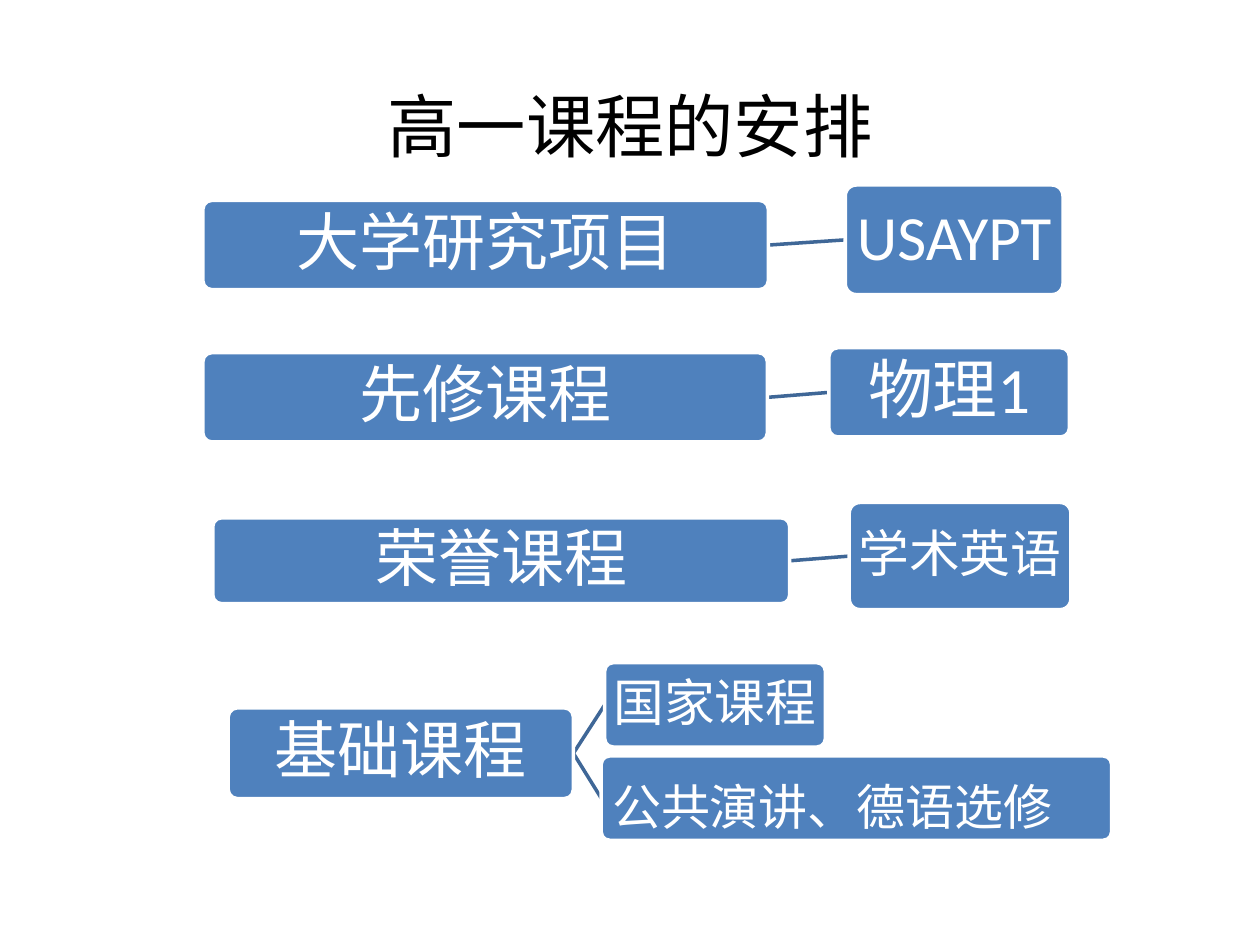
import pptx
import pptx.util
import pptx.dml.color
import pptx.enum.shapes
import pptx.enum.text
import pptx.oxml.ns
from lxml import etree
from pptx.util import Cm

FONT = "Calibri"
BLUE, DARK_BLUE, WHITE, BLACK = "4F81BD", "3F6797", "FFFFFF", "000000"

# Each course: its box, then the boxes it leads to; a box is (text, size, frame in cm).
COURSES = [
    (("大学研究项目", 36, (4.09, 4.04, 11.4, 1.8)),
     [("USAYPT", 36, (17.04, 3.73, 4.39, 2.21))]),
    (("先修课程", 36, (4.09, 7.11, 11.38, 1.8)),
     [("物理1", 37, (16.71, 7.01, 4.85, 1.8))]),
    (("荣誉课程", 36, (4.29, 10.44, 11.63, 1.73)),
     [("学术英语", 29, (17.12, 10.13, 4.47, 2.16))]),
    (("基础课程", 36, (4.6, 14.27, 6.96, 1.83)),
     [("国家课程", 29, (12.19, 13.36, 4.45, 1.7)),
      ("", 28, (12.12, 15.24, 10.29, 1.7))]),
]


def color(value):
    return pptx.dml.color.RGBColor.from_string(value)


def write(sp, text, size, fg=WHITE, align="CENTER", anchor="MIDDLE",
          wrap=True, inset=None, spacing=None):
    tf = sp.text_frame
    tf.word_wrap = wrap
    tf.vertical_anchor = pptx.enum.text.MSO_ANCHOR[anchor]
    if inset is not None:
        tf.margin_left = tf.margin_right = Cm(inset)
        tf.margin_top = tf.margin_bottom = Cm(inset)
    p = tf.paragraphs[0]
    p.alignment = pptx.enum.text.PP_ALIGN[align]
    if spacing:
        p.line_spacing = spacing
    r = p.add_run()
    r.text = text
    r.font.name = FONT
    r.font.size = pptx.util.Pt(size)
    r.font.color.rgb = color(fg)


def add_text(s, frame, text, size, **fmt):
    sp = s.shapes.add_textbox(*map(Cm, frame))
    write(sp, text, size, **fmt)


def add_box(s, text, size, frame):
    sp = s.shapes.add_shape(
        pptx.enum.shapes.MSO_SHAPE.ROUNDED_RECTANGLE, *map(Cm, frame))
    sp.adjustments[0] = 0.1
    sp.shadow.inherit = False
    sp.fill.solid()
    sp.fill.fore_color.rgb = color(BLUE)
    sp.line.color.rgb = color(WHITE)
    sp.line.width = pptx.util.Pt(2)
    if text:
        write(sp, text, size, wrap=False, inset=0.06, spacing=0.9)


def add_link(s, start, end):
    """Join the right middle of one frame to the left middle of another."""
    x1, y1, w1, h1 = start
    x2, y2, _, h2 = end
    c = s.shapes.add_connector(
        pptx.enum.shapes.MSO_CONNECTOR.STRAIGHT,
        Cm(x1 + w1), Cm(y1 + h1 / 2), Cm(x2), Cm(y2 + h2 / 2))
    c.line.color.rgb = color(DARK_BLUE)
    c.line.width = pptx.util.Pt(2)
    etree.SubElement(c._element.spPr, pptx.oxml.ns.qn("a:effectLst"))


def main():
    prs = pptx.Presentation()
    prs.slide_width, prs.slide_height = Cm(25.4), Cm(19.05)
    s = prs.slides.add_slide(prs.slide_layouts[6])
    add_text(s, (1.27, 1.52, 22.86, 2.01), "高一课程的安排", 39.6, fg=BLACK)
    for course, branches in COURSES:
        for branch in branches:
            add_link(s, course[2], branch[2])
        for box in [course, *branches]:
            add_box(s, *box)
    add_text(s, (12.09, 15.52, 12.4, 1.45), "公共演讲、德语选修", 28,
             align="LEFT", anchor="TOP")
    prs.save("out.pptx")


if __name__ == "__main__":
    main()
